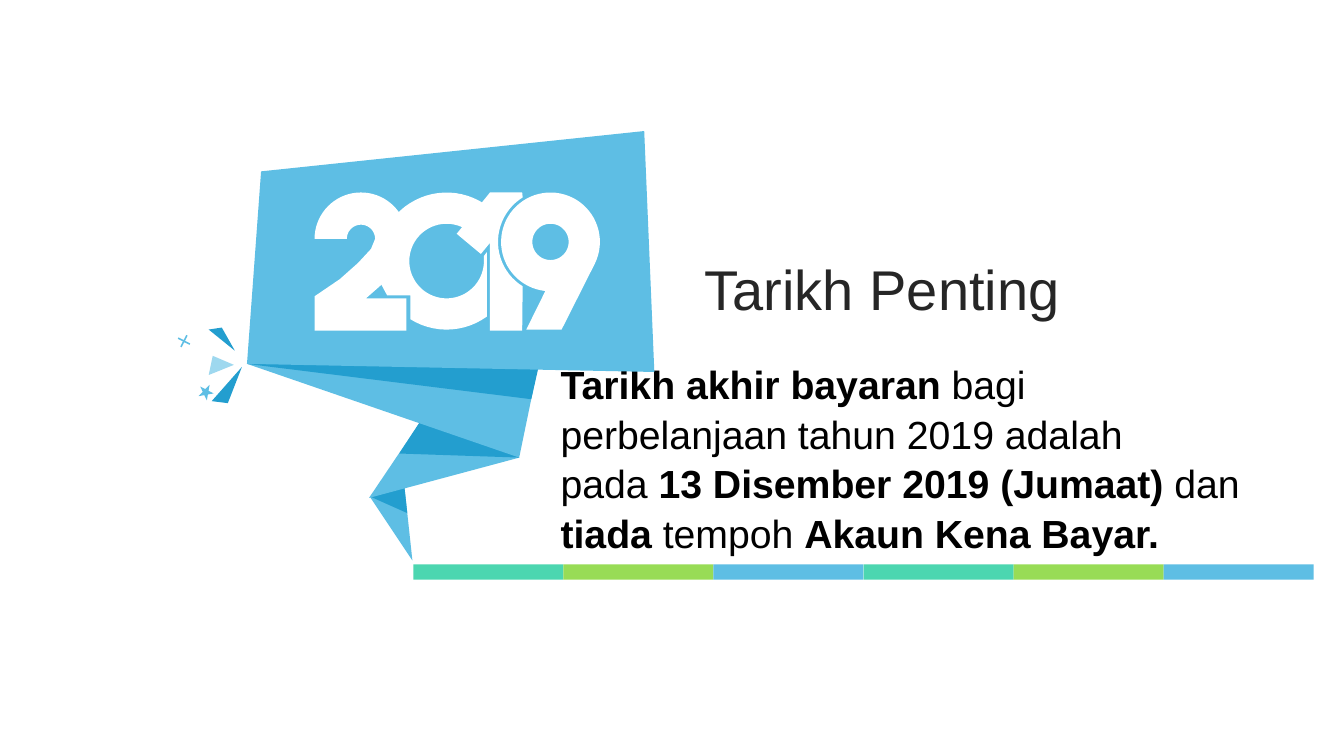
from dataclasses import dataclass
from math import cos, radians, sin

from pptx import Presentation
from pptx.dml.color import RGBColor
from pptx.enum.shapes import MSO_SHAPE
from pptx.enum.text import MSO_ANCHOR, MSO_AUTO_SIZE, PP_ALIGN
from pptx.oxml.xmlchemy import OxmlElement
from pptx.util import Inches, Pt

Point = tuple[float, float]
Contour = list[Point]


@dataclass(frozen=True)
class Theme:
    font: str = "Arial"
    title_size: int = 40
    body_size: int = 28
    title: str = "262626"
    body: str = "000000"
    white: str = "FFFFFF"
    sky: str = "5EBEE4"
    deep: str = "239ECF"
    pale: str = "9ED8EF"
    mint: str = "4CD6B0"
    lime: str = "98DC56"


THEME = Theme()


@dataclass(frozen=True)
class Outline:
    color: str
    contours: list[Contour]


@dataclass(frozen=True)
class Preset:
    kind: MSO_SHAPE
    color: str
    left: float
    top: float
    width: float
    height: float
    rotation: float = 0
    adjustment: float | None = None


def arc(center: Point, radius: float, start: int, end: int) -> Contour:
    """Points along a circle; angles in degrees, clockwise from the right."""
    steps = max(2, abs(end - start) // 5)
    angles = [radians(start + (end - start) * i / steps) for i in range(steps + 1)]
    return [(center[0] + radius * cos(a), center[1] + radius * sin(a)) for a in angles]


RIBBON = [
    Outline(THEME.sky, [[(3.67, 4.93), (4.09, 5.56), (3.98, 4.54)]]),
    Outline(THEME.deep, [[(3.68, 4.93), (4.04, 5.09), (3.98, 4.54)]]),
    Outline(THEME.sky, [[(5.15, 4.54), (3.66, 4.94), (4.32, 3.96)]]),
    Outline(THEME.deep, [[(5.15, 4.54), (3.96, 4.5), (4.28, 4.01)]]),
    Outline(THEME.sky, [[(2.45, 3.61), (5.15, 4.54), (5.41, 3.28)]]),
    Outline(THEME.deep, [[(2.45, 3.61), (5.27, 3.96), (5.38, 3.47)]]),
    Outline(THEME.sky, [[(2.59, 1.7), (6.39, 1.3), (6.49, 3.69), (2.45, 3.61)]]),
]

TWO_HEAD, ZERO_CENTER, NINE_HEAD = (3.58, 2.37), (4.43, 2.59), (5.46, 2.4)
NINE = [
    arc(NINE_HEAD, 0.49, 26, -264) + [(5.22, 3.27), (5.57, 3.27)],
    arc(NINE_HEAD, 0.18, 0, 360),
]
ONE = [
    [(4.53, 2.32), (4.77, 2.52), (4.86, 2.41), (4.86, 3.28), (5.18, 3.28)]
    + arc(NINE_HEAD, 0.52, 122, 238)
    + [(5.18, 1.91), (4.86, 1.91)]
]
ZERO = [
    arc(ZERO_CENTER, 0.68, 122, 54)
    + [(4.83, 2.5), (4.8, 2.54)]
    + arc(ZERO_CENTER, 0.37, 0, 297)
    + arc(ZERO_CENTER, 0.68, 303, 222)
    + [(3.97, 2.2), (4.0, 2.27), (4.02, 2.36), (3.98, 2.52), (3.9, 2.66)]
    + [(3.77, 2.8), (3.84, 2.93), (4.07, 2.93)]
]
TWO = [
    [(3.63, 2.96), (3.79, 2.82), (3.91, 2.68), (3.99, 2.54)]
    + arc(TWO_HEAD, 0.46, 0, -180)
    + arc(TWO_HEAD, 0.14, 180, 360)
    + [(3.68, 2.47), (3.55, 2.61), (3.37, 2.77), (3.12, 2.94)]
    + [(3.12, 3.28), (4.03, 3.28), (4.03, 2.96)]
]
YEAR = [Outline(THEME.white, digit) for digit in (NINE, ONE, ZERO, TWO)]

CONFETTI = [
    Outline(THEME.pale, [[(2.07, 3.72), (2.32, 3.62), (2.11, 3.53)]]),
    Outline(THEME.deep, [[(2.4, 3.64), (2.1, 3.98), (2.26, 4.0)]]),
    Preset(MSO_SHAPE.CROSS, THEME.sky, 1.76, 3.32, 0.13, 0.13, 27.4, 0.44),
    Preset(MSO_SHAPE.STAR_5_POINT, THEME.sky, 1.97, 3.81, 0.15, 0.15, 27.1),
    Outline(THEME.deep, [[(2.33, 3.48), (2.07, 3.27), (2.2, 3.25)]]),
]

BAR_COUNT, BAR_LEFT, BAR_RIGHT = 6, 4.1, 13.03
BAR_WIDTH = (BAR_RIGHT - BAR_LEFT) / BAR_COUNT
BAR_COLORS = (THEME.mint, THEME.lime, THEME.sky)
BARS = [
    Preset(MSO_SHAPE.RECTANGLE, BAR_COLORS[i % len(BAR_COLORS)],
           BAR_LEFT + i * BAR_WIDTH, 5.6, BAR_WIDTH, 0.15)
    for i in range(BAR_COUNT)
]

# Each line is a list of (text, bold) pieces.
DEADLINE = [
    [("Tarikh akhir bayaran", True), (" bagi", False)],
    [("perbelanjaan tahun 2019 adalah", False)],
    [("pada ", False), ("13 Disember 2019 (Jumaat) ", True), ("dan", False)],
    [("tiada", True), (" tempoh ", False), ("Akaun Kena Bayar.", True)],
]


def draw_outline(shapes, outline: Outline):
    contours = [[(Inches(x), Inches(y)) for x, y in c] for c in outline.contours]
    builder = shapes.build_freeform(*contours[0][0])
    builder.add_line_segments(contours[0][1:], close=True)
    for hole in contours[1:]:
        builder.move_to(*hole[0])
        builder.add_line_segments(hole[1:], close=True)
    return builder.convert_to_shape()


def draw_preset(shapes, preset: Preset):
    box = (preset.left, preset.top, preset.width, preset.height)
    shape = shapes.add_shape(preset.kind, *map(Inches, box))
    shape.rotation = preset.rotation
    if preset.adjustment is not None:
        shape.adjustments[0] = preset.adjustment
    return shape


def draw_group(slide, parts: list[Outline | Preset]) -> None:
    shapes = slide.shapes.add_group_shape().shapes
    for part in parts:
        draw = draw_outline if isinstance(part, Outline) else draw_preset
        shape = draw(shapes, part)
        shape.shadow.inherit = False
        shape.fill.solid()
        shape.fill.fore_color.rgb = RGBColor.from_string(part.color)
        shape.line.fill.background()


def add_text(paragraph, text: str, *, size: int, color: str, bold: bool = False) -> None:
    run = paragraph.add_run()
    run.text = text
    run.font.name = THEME.font
    run.font.size = Pt(size)
    run.font.bold = bold
    run.font.color.rgb = RGBColor.from_string(color)


def place(holder, left: float, top: float, width: float, height: float):
    """Move a placeholder and return its text frame, centred vertically."""
    holder.left, holder.top = Inches(left), Inches(top)
    holder.width, holder.height = Inches(width), Inches(height)
    frame = holder.text_frame
    frame.word_wrap = True
    frame.auto_size = MSO_AUTO_SIZE.NONE
    frame.vertical_anchor = MSO_ANCHOR.MIDDLE
    return frame


def fill_deadline(frame) -> None:
    for i, line in enumerate(DEADLINE):
        paragraph = frame.add_paragraph() if i else frame.paragraphs[0]
        paragraph.level = 1
        paragraph.line_spacing = 1.05
        paragraph.space_before = Pt(0)
        properties = paragraph._p.get_or_add_pPr()
        properties.set("marL", str(Inches(0.5)))
        properties.set("indent", "0")
        properties.append(OxmlElement("a:buNone"))
        for text, bold in line:
            add_text(paragraph, text, size=THEME.body_size, color=THEME.body, bold=bold)


def main() -> None:
    deck = Presentation()
    deck.slide_width, deck.slide_height = Inches(13.33), Inches(7.5)
    slide = deck.slides.add_slide(deck.slide_layouts.get_by_name("Title and Content"))
    heading = place(slide.shapes.title, 6.89, 2.47, 6.32, 0.77).paragraphs[0]
    heading.alignment = PP_ALIGN.LEFT
    add_text(heading, "Tarikh Penting", size=THEME.title_size, color=THEME.title)
    fill_deadline(place(slide.placeholders[1], 4.96, 3.54, 8.07, 1.99))
    draw_group(slide, RIBBON + YEAR + CONFETTI)
    draw_group(slide, BARS)
    deck.save("out.pptx")


if __name__ == "__main__":
    main()
